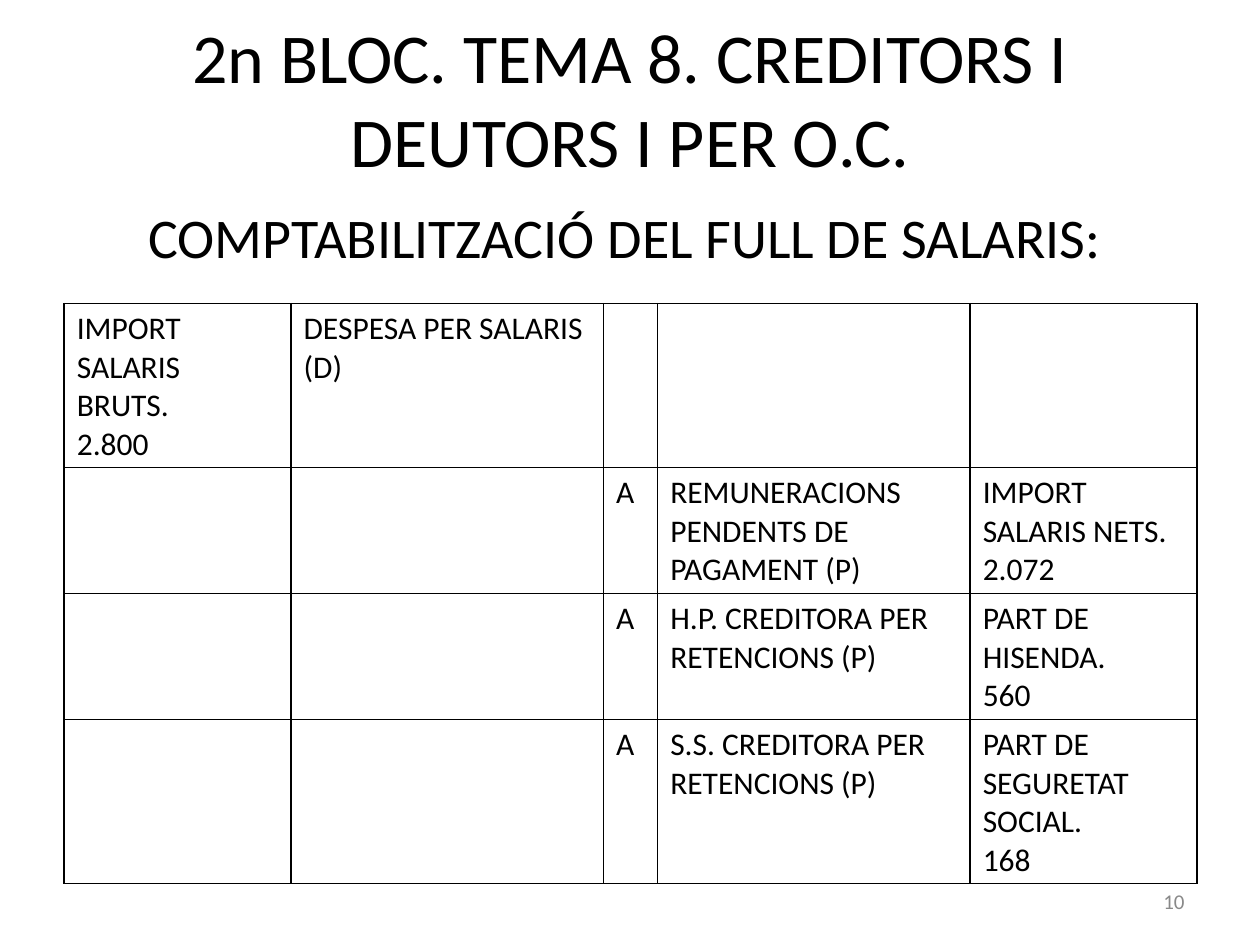
from dataclasses import dataclass

from lxml.etree import SubElement
from pptx import Presentation
from pptx.dml.color import RGBColor
from pptx.enum.text import MSO_ANCHOR, MSO_AUTO_SIZE, PP_ALIGN
from pptx.oxml.ns import qn
from pptx.util import Inches, Pt


@dataclass(frozen=True)
class Theme:
    font: str = "Calibri"
    ink: str = "000000"
    muted: str = "898989"
    paper: str = "FFFFFF"
    title: int = 40
    subtitle: int = 32
    body: int = 18
    number: int = 12
    border: int = 1


THEME = Theme()
TITLE = "2n BLOC. TEMA 8. CREDITORS I DEUTORS I PER O.C."
SUBTITLE = "COMPTABILITZACIÓ DEL FULL DE SALARIS:"
COL_WIDTHS = (1.8, 2.48, 0.43, 2.48, 1.8)
ROW_HEIGHTS = (1.3, 1, 1, 1.3)
ENTRIES = (
    (("IMPORT SALARIS BRUTS.", "2.800"), ("DESPESA PER SALARIS (D)",), (), (), ()),
    ((), (), ("A",), ("REMUNERACIONS PENDENTS DE PAGAMENT (P)",),
     ("IMPORT SALARIS NETS.", "2.072")),
    ((), (), ("A",), ("H.P. CREDITORA PER RETENCIONS (P)",),
     ("PART DE HISENDA.", "560")),
    ((), (), ("A",), ("S.S. CREDITORA PER RETENCIONS (P)",),
     ("PART DE SEGURETAT SOCIAL.", "168")),
)


def write(tf, lines, size, color=THEME.ink, align=PP_ALIGN.LEFT):
    tf.word_wrap = True
    for i, line in enumerate(lines):
        p = tf.paragraphs[0] if i == 0 else tf.add_paragraph()
        p.alignment = align
        r = p.add_run()
        r.text = line
        r.font.name = THEME.font
        r.font.size = Pt(size)
        r.font.color.rgb = RGBColor.from_string(color)


def add_title(s, x, y, w, h):
    sp = s.shapes.title
    sp.left, sp.top, sp.width, sp.height = (Inches(v) for v in (x, y, w, h))
    tf = sp.text_frame
    tf.auto_size = MSO_AUTO_SIZE.NONE
    tf.vertical_anchor = MSO_ANCHOR.MIDDLE
    write(tf, [TITLE], THEME.title, align=PP_ALIGN.CENTER)


def add_label(s, x, y, w, h, text, size, color, align, anchor):
    tf = s.shapes.add_textbox(*(Inches(v) for v in (x, y, w, h))).text_frame
    tf.vertical_anchor = anchor
    write(tf, [text], size, color, align)


def set_borders(cell):
    """Draw all four edges; they must come before the fill in tcPr."""
    tcPr = cell._tc.get_or_add_tcPr()
    for edge in ("a:lnL", "a:lnR", "a:lnT", "a:lnB"):
        ln = SubElement(tcPr, qn(edge), w=str(Pt(THEME.border)))
        fill = SubElement(ln, qn("a:solidFill"))
        SubElement(fill, qn("a:srgbClr"), val=THEME.ink)


def add_journal(s, x, y):
    """Place the journal entry: debit on the left, credit on the right."""
    table = s.shapes.add_table(
        len(ENTRIES), len(COL_WIDTHS), Inches(x), Inches(y),
        Inches(sum(COL_WIDTHS)), Inches(sum(ROW_HEIGHTS))).table
    table.first_row = table.horz_banding = False
    for col, width in zip(table.columns, COL_WIDTHS):
        col.width = Inches(width)
    for row, height, entry in zip(table.rows, ROW_HEIGHTS, ENTRIES):
        row.height = Inches(height)
        for cell, lines in zip(row.cells, entry):
            set_borders(cell)
            cell.fill.solid()
            cell.fill.fore_color.rgb = RGBColor.from_string(THEME.paper)
            write(cell.text_frame, lines, THEME.body)


def main():
    prs = Presentation()
    prs.slide_width, prs.slide_height = Inches(10), Inches(7.5)
    s = prs.slides.add_slide(prs.slide_layouts[5])
    add_title(s, 0.75, 0.23, 8.5, 1.09)
    add_label(s, 0.39, 1.56, 9.14, 0.7, SUBTITLE, THEME.subtitle, THEME.ink,
              PP_ALIGN.CENTER, MSO_ANCHOR.TOP)
    add_label(s, 7.17, 6.95, 2.33, 0.4, "10", THEME.number, THEME.muted,
              PP_ALIGN.RIGHT, MSO_ANCHOR.MIDDLE)
    add_journal(s, 0.51, 2.41)
    prs.save("out.pptx")


if __name__ == "__main__":
    main()
